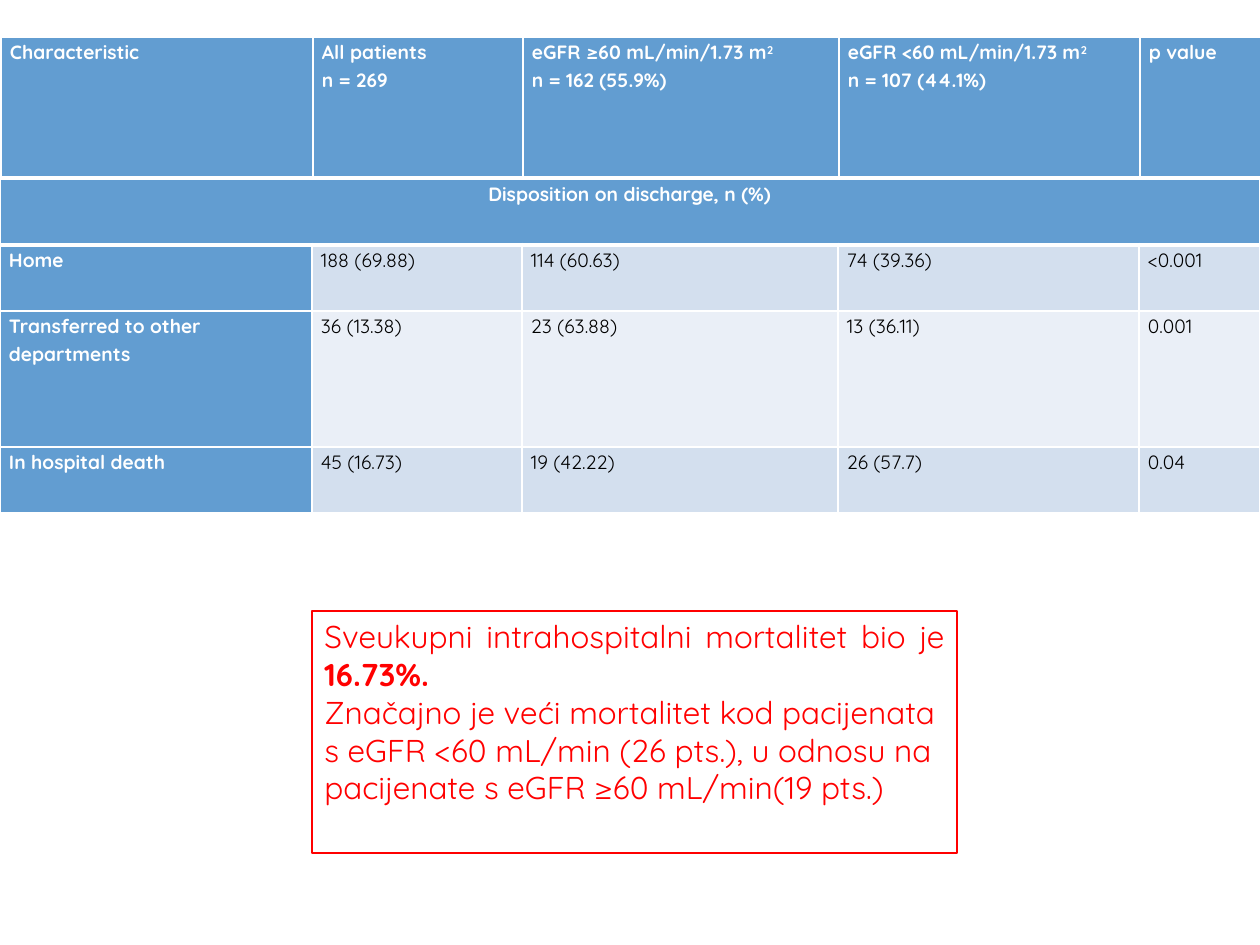
from lxml.etree import SubElement
from pptx import Presentation
from pptx.dml.color import RGBColor
from pptx.enum.shapes import MSO_SHAPE as SHAPE
from pptx.enum.text import MSO_ANCHOR as ANCHOR, PP_ALIGN as ALIGN
from pptx.oxml.ns import qn
from pptx.util import Emu, Pt

FONT = "Quicksand"
WHITE, BLACK, RED = "FFFFFF", "000000", "FF0000"
BLUE, BAND_DARK, BAND_LIGHT = "629DD1", "D3DFEE", "EAEFF7"
COLUMNS = [312, 210, 316, 301, 121]

# Each cell is a list of paragraphs; "^" starts a superscript.
HEADINGS = [
    ["Characteristic"],
    ["All patients", "n = 269"],
    ["eGFR ≥60 mL/min/1.73 m^2", "n = 162 (55.9%)"],
    ["eGFR <60 mL/min/1.73 m^2", "n = 107 (44.1%)"],
    ["p value"],
]
DISPOSITIONS = [
    ["Home", "188 (69.88)", "114 (60.63)", "74 (39.36)", "<0.001"],
    ["Transferred to other departments", "36 (13.38)", "23 (63.88)", "13 (36.11)", "0.001"],
    ["In hospital death", "45 (16.73)", "19 (42.22)", "26 (57.7)", "0.04"],
]
CONCLUSION = [
    (ALIGN.JUSTIFY, [("Sveukupni intrahospitalni mortalitet bio je ", False), ("16.73%. ", True)]),
    (ALIGN.LEFT, [("Značajno je veći mortalitet kod pacijenata s eGFR <60 mL/min (26 pts.), "
                   "u odnosu na pacijenate s eGFR ≥60 mL/min(19 pts.)", False)]),
]


def px(n):
    return Emu(n * 914400 // 126)


def rgb(color):
    return RGBColor.from_string(color)


def add_run(p, text, size, color, bold):
    r = p.add_run()
    r.text = text
    r.font.name, r.font.size, r.font.bold = FONT, Pt(size), bold
    r.font.color.rgb = rgb(color)
    return r


def set_borders(cell, bottom):
    """White 1 pt borders, with the bottom one as wide as asked."""
    tc_pr = cell._tc.get_or_add_tcPr()
    for tag, width in (("a:lnL", 1), ("a:lnR", 1), ("a:lnT", 1), ("a:lnB", bottom)):
        ln = SubElement(tc_pr, qn(tag), w=str(Pt(width)))
        SubElement(SubElement(ln, qn("a:solidFill")), qn("a:srgbClr"), val=WHITE)


def fill_cell(cell, paragraphs, fill, color=WHITE, bold=True, align=ALIGN.LEFT, bottom=1):
    set_borders(cell, bottom)
    cell.fill.solid()
    cell.fill.fore_color.rgb = rgb(fill)
    cell.margin_left = cell.margin_right = px(9)
    cell.margin_top = cell.margin_bottom = 0
    tf = cell.text_frame
    for i, text in enumerate(paragraphs):
        p = tf.add_paragraph() if i else tf.paragraphs[0]
        p.alignment, p.line_spacing, p.space_before = align, 1.15, Pt(0.1)
        base, _, superscript = text.partition("^")
        add_run(p, base, 11, color, bold)
        if superscript:
            r = add_run(p, superscript, 11, color, bold)
            r.font._element.set("baseline", "30000")


def add_grid(slide, left, top, rows):
    table = slide.shapes.add_table(len(rows), len(COLUMNS), px(left), px(top),
                                   px(sum(COLUMNS)), px(sum(rows))).table
    for column, width in zip(table.columns, COLUMNS):
        column.width = px(width)
    for row, height in zip(table.rows, rows):
        row.height = px(height)
    return table


def add_dispositions(slide):
    table = add_grid(slide, 0, 179, [66, 66, 136, 66])
    table.cell(0, 0).merge(table.cell(0, len(COLUMNS) - 1))
    fill_cell(table.cell(0, 0), ["Disposition on discharge, n (%)"], BLUE,
              align=ALIGN.CENTER, bottom=3)
    for i, (label, *values) in enumerate(DISPOSITIONS, 1):
        fill_cell(table.cell(i, 0), [label], BLUE)
        band = BAND_DARK if i % 2 else BAND_LIGHT
        for j, value in enumerate(values, 1):
            fill_cell(table.cell(i, j), [value], band, BLACK, False)


def add_headings(slide):
    table = add_grid(slide, 1, 37, [141])
    for j, heading in enumerate(HEADINGS):
        fill_cell(table.cell(0, j), heading, BLUE, bottom=3)


def add_conclusion(slide):
    sp = slide.shapes.add_shape(SHAPE.RECTANGLE, px(312), px(611), px(645), px(242))
    sp.shadow.inherit = False
    sp.fill.solid()
    sp.fill.fore_color.rgb = rgb(WHITE)
    sp.line.color.rgb = rgb(RED)
    sp.line.width = Pt(0.75)
    tf = sp.text_frame
    tf.word_wrap, tf.vertical_anchor = True, ANCHOR.TOP
    for i, (align, runs) in enumerate(CONCLUSION):
        p = tf.add_paragraph() if i else tf.paragraphs[0]
        p.alignment = align
        for text, bold in runs:
            add_run(p, text, 18, RED, bold)


def main():
    prs = Presentation()
    prs.slide_width, prs.slide_height = px(1260), px(945)
    slide = prs.slides.add_slide(prs.slide_layouts[6])
    add_dispositions(slide)
    add_headings(slide)
    add_conclusion(slide)
    prs.save("out.pptx")


if __name__ == "__main__":
    main()
